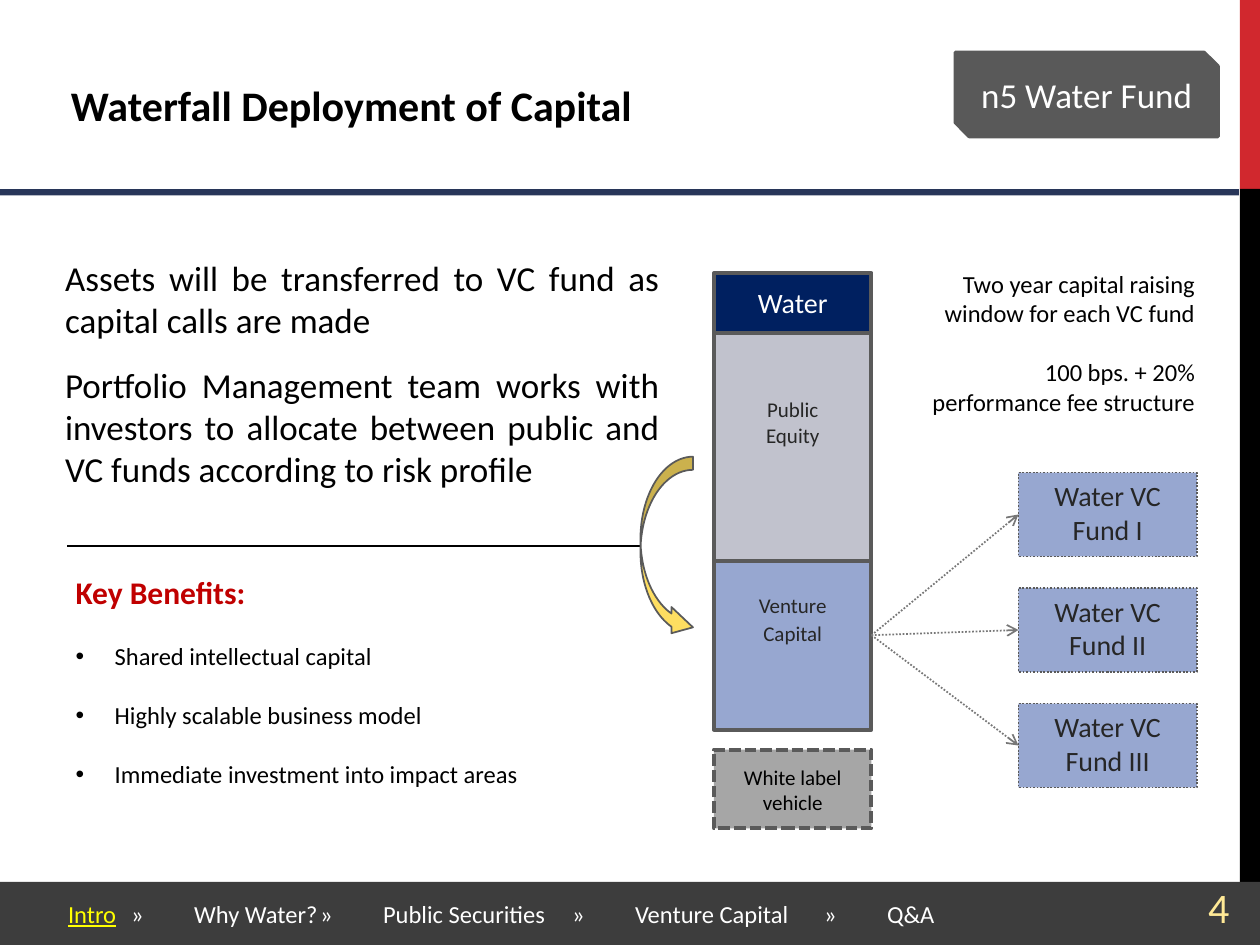
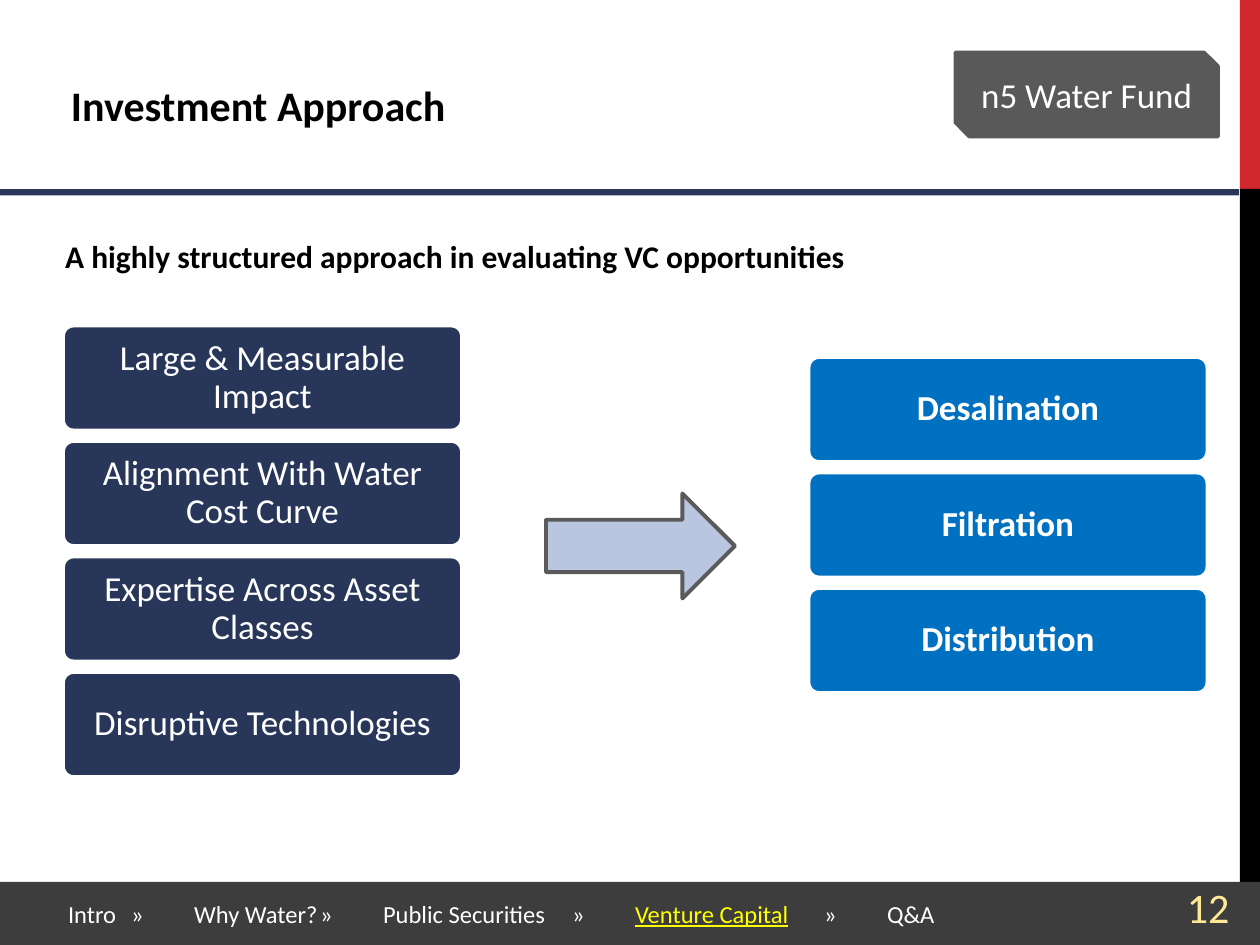
"""Build two slides of the water fund deck on a grid of 120 columns and 90 rows."""
from dataclasses import dataclass, field
from typing import Any, NamedTuple

from lxml import etree
from pptx import Presentation
from pptx import util as u
from pptx.dml.color import RGBColor
from pptx.enum import dml, shapes, text
from pptx.oxml import ns

WIDTH, HEIGHT = u.Inches(10), u.Inches(7.5)
COLUMNS, ROWS = 120, 90


@dataclass(frozen=True)
class Theme:
    """Colours, type sizes and the typeface."""
    face: str = "Calibri"
    black: str = "000000"
    white: str = "FFFFFF"
    ink: str = "262626"
    red: str = "D1282E"
    benefit: str = "C00000"
    band: str = "3D3D3D"
    badge: str = "595959"
    edge: str = "5A5A5A"
    flow: str = "777777"
    navy: str = "283659"
    deep: str = "002060"
    sector: str = "0070C0"
    venture: str = "97A7D0"
    public: str = "C1C2CD"
    label: str = "A6A6A6"
    gold: str = "FEDE61"
    arrow: str = "BAC5DF"
    number: str = "FFE996"
    current: str = "FFFF00"
    title: int = 24
    body: int = 20
    lead: int = 18
    fund: int = 16
    note: int = 14
    small: int = 12


T = Theme()
LEFT, CENTER, RIGHT, JUSTIFY = (text.PP_ALIGN.LEFT, text.PP_ALIGN.CENTER,
                                text.PP_ALIGN.RIGHT, text.PP_ALIGN.JUSTIFY)
TOP, MIDDLE = text.MSO_ANCHOR.TOP, text.MSO_ANCHOR.MIDDLE
DOTS, DASHES = dml.MSO_LINE.ROUND_DOT, dml.MSO_LINE.SQUARE_DOT
KIND = shapes.MSO_SHAPE


class Cell(NamedTuple):
    """A place on the grid."""
    col: float
    row: float
    cols: float
    rows: float


class Style(NamedTuple):
    """The look of a run."""
    size: int
    color: str
    bold: bool = False
    underline: bool = False


class Run(NamedTuple):
    """Words in one style."""
    words: str
    style: Style


@dataclass(frozen=True)
class Para:
    """A paragraph; gap is the space before it in points."""
    runs: tuple[Run, ...]
    align: Any = LEFT
    gap: float = 0
    spacing: float = 1.0
    bullet: bool = False
    tabs: tuple[float, ...] = ()


@dataclass(frozen=True)
class Panel:
    """A filled shape with optional text."""
    cell: Cell
    fill: str
    kind: Any = KIND.RECTANGLE
    edge: str | None = None
    weight: float = 2.25
    dash: Any = None
    adjust: tuple[float, ...] = ()
    paras: tuple[Para, ...] = ()
    anchor: Any = MIDDLE
    insets: dict[str, float] = field(default_factory=dict)


def para(words: str, style: Style, **layout: Any) -> Para:
    """Make a paragraph of one run."""
    return Para((Run(words, style),), **layout)


def x(col: float) -> int:
    """Turn a column into a length."""
    return round(WIDTH * col / COLUMNS)


def y(row: float) -> int:
    """Turn a row into a length."""
    return round(HEIGHT * row / ROWS)


def apply(target: Any, values: dict[str, Any]) -> None:
    """Set each named attribute."""
    for name, value in values.items():
        setattr(target, name, value)


def place(shape: Any, cell: Cell) -> None:
    """Move a shape to its cell."""
    apply(shape, {"left": x(cell.col), "top": y(cell.row),
                  "width": x(cell.cols), "height": y(cell.rows)})


def add_marks(paragraph: Any, spec_para: Para) -> None:
    """Write the bullet and tab stops of a paragraph."""
    props = paragraph._p.get_or_add_pPr()
    indent = u.Inches(0.31) if spec_para.bullet else 0
    props.set("marL", str(indent))
    props.set("indent", str(-indent))
    if spec_para.bullet:
        etree.SubElement(props, ns.qn("a:buChar")).set("char", "•")
    else:
        etree.SubElement(props, ns.qn("a:buNone"))
    if spec_para.tabs:
        stops = etree.SubElement(props, ns.qn("a:tabLst"))
        for stop in spec_para.tabs:
            tab = etree.SubElement(stops, ns.qn("a:tab"))
            tab.set("pos", str(u.Inches(stop)))
            tab.set("algn", "l")


def write(frame: Any, paras: tuple[Para, ...], anchor: Any = TOP,
          insets: dict[str, float] | None = None) -> None:
    """Fill a text frame."""
    margins = {f"margin_{side}": u.Inches(size) for side, size in (insets or {}).items()}
    apply(frame, {"word_wrap": True, "auto_size": text.MSO_AUTO_SIZE.NONE,
                  "vertical_anchor": anchor, **margins})
    for index, item in enumerate(paras):
        paragraph = frame.add_paragraph() if index else frame.paragraphs[0]
        add_marks(paragraph, item)
        apply(paragraph, {"alignment": item.align, "space_before": u.Pt(item.gap),
                          "space_after": u.Pt(0), "line_spacing": item.spacing})
        for words, style in item.runs:
            run = paragraph.add_run()
            run.text = words
            apply(run.font, {"name": T.face, "size": u.Pt(style.size),
                             "bold": style.bold, "underline": style.underline})
            run.font.color.rgb = RGBColor.from_string(style.color)


def draw(slide: Any, panel: Panel) -> Any:
    """Draw a panel."""
    shape = slide.shapes.add_shape(panel.kind, 0, 0, 0, 0)
    place(shape, panel.cell)
    shape.shadow.inherit = False
    shape.fill.solid()
    shape.fill.fore_color.rgb = RGBColor.from_string(panel.fill)
    if panel.edge:
        shape.line.color.rgb = RGBColor.from_string(panel.edge)
        apply(shape.line, {"width": u.Pt(panel.weight), "dash_style": panel.dash})
    else:
        shape.line.fill.background()
    for index, value in enumerate(panel.adjust):
        shape.adjustments[index] = value
    if panel.paras:
        write(shape.text_frame, panel.paras, panel.anchor, panel.insets)
    return shape


def fill_holder(slide: Any, index: int, cell: Cell, paras: tuple[Para, ...],
                anchor: Any = TOP, insets: dict[str, float] | None = None) -> None:
    """Move and fill a placeholder."""
    holder = slide.placeholders[index]
    place(holder, cell)
    write(holder.text_frame, paras, anchor, insets)


def add_note(slide: Any, cell: Cell, paras: tuple[Para, ...], anchor: Any = TOP) -> None:
    """Add a plain text box."""
    box = slide.shapes.add_textbox(0, 0, 0, 0)
    place(box, cell)
    write(box.text_frame, paras, anchor)


def add_line(slide: Any, start: tuple[float, float], end: tuple[float, float],
             color: str, dash: Any = None, target: Any = None) -> None:
    """Draw a line, with an arrowhead when it leads to a target's left side."""
    line = slide.shapes.add_connector(shapes.MSO_CONNECTOR.STRAIGHT,
                                      x(start[0]), y(start[1]), x(end[0]), y(end[1]))
    line.line.color.rgb = RGBColor.from_string(color)
    apply(line.line, {"width": u.Pt(1), "dash_style": dash})
    if target is not None:
        line.end_connect(target, 1)
        etree.SubElement(line.line._get_or_add_ln(), ns.qn("a:tailEnd")).set("type", "arrow")
    etree.SubElement(line._element.spPr, ns.qn("a:effectLst"))


SECTIONS = ("Intro", "Why Water?", "Public Securities", "Venture Capital", "Q&A")
SECTION_TABS = (0.61, 0.92, 2.09, 2.4, 3.96, 4.26, 5.71, 6.02)


def navigation(current: str) -> Para:
    """List the sections with the current one marked."""
    plain, marked = Style(T.note, T.white), Style(T.note, T.current, underline=True)
    runs: list[Run] = []
    for section in SECTIONS:
        if runs:
            runs.append(Run("\t»\t", plain))
        runs.append(Run(section, marked if section == current else plain))
    return Para(tuple(runs), tabs=SECTION_TABS)


def start_slide(deck: Any, layout: int, title: str, section: str, number: str) -> Any:
    """Add a slide with the shared title, bands, badge and footer."""
    slide = deck.slides.add_slide(deck.slide_layouts[layout])
    fill_holder(slide, 0, Cell(1, 5, 80, 10), (para(title, Style(T.title, T.black, True)),),
                MIDDLE, {"left": 0.48})
    badge = para("n5 Water Fund", Style(T.body, T.white), align=CENTER)
    for panel in (
        Panel(Cell(118.08, 0, 1.92, 18), T.red),
        Panel(Cell(118.08, 18, 1.92, 72), T.black),
        Panel(Cell(0, 84, 120, 6), T.band, paras=(navigation(section),), insets={"left": 0.54}),
        Panel(Cell(0, 18, 118, 0.6), T.navy),
        Panel(Cell(91, 5, 25, 8), T.badge, KIND.SNIP_2_DIAG_RECTANGLE, T.badge, paras=(badge,)),
    ):
        draw(slide, panel)
    add_note(slide, Cell(101, 84, 17.28, 4.8),
             (para(number, Style(T.title, T.number), align=RIGHT),), MIDDLE)
    return slide


def build_waterfall(deck: Any) -> None:
    """Build the capital deployment slide."""
    slide = start_slide(deck, 3, "Waterfall Deployment of Capital", "Intro", "4")
    body, note = Style(T.body, T.black), Style(T.note, T.black)
    fill_holder(slide, 1, Cell(5, 25, 59, 21), (
        para("Assets will be transferred to VC fund as capital calls are made", body, align=JUSTIFY),
        para("Portfolio Management team works with investors to allocate between public "
             "and VC funds according to risk profile", body, align=JUSTIFY, gap=13)), MIDDLE)
    benefits = ("Shared intellectual capital", "Highly scalable business model",
                "Immediate investment into impact areas")
    fill_holder(slide, 2, Cell(6, 54, 60, 24.6), (
        para("Key Benefits:", Style(T.lead, T.benefit, True)),
        *(para(benefit, note, gap=17, bullet=True) for benefit in benefits)))
    add_note(slide, Cell(87, 25, 28, 21), (
        para("Two year capital raising window for each VC fund", note, align=RIGHT),
        para("100 bps. + 20% performance fee structure", note, align=RIGHT, gap=17)))

    small = Style(T.small, T.ink)
    for row, rows, fill, style, words, gap, anchor, inset, dash in (
        (31.68, 21.72, T.public, small, ("Public", "Equity"), 0, TOP, 0.51, None),
        (53.4, 16.1, T.venture, small, ("Venture", "Capital"), 2, TOP, 0.25, None),
        (26, 5.68, T.deep, Style(T.fund, T.white), ("Water",), 0, MIDDLE, 0.05, None),
        (71.4, 7.5, T.label, Style(T.small, T.black), ("White label vehicle",), 0, TOP, 0.12, DASHES),
    ):
        paras = tuple(para(word, style, align=CENTER, gap=gap if index else 0)
                      for index, word in enumerate(words))
        draw(slide, Panel(Cell(68, row, 15, rows), fill, edge=T.edge, dash=dash,
                          paras=paras, anchor=anchor, insets={"top": inset}))

    for index, numeral in enumerate(("I", "II", "III")):
        row = 45 + 11 * index
        name = para(f"Water VC Fund {numeral}", Style(T.fund, T.ink), align=CENTER)
        fund = draw(slide, Panel(Cell(97, row, 17, 8), T.venture, edge=T.edge, weight=1,
                                 dash=DOTS, paras=(name,), anchor=TOP))
        add_line(slide, (83, 60.5), (97, row + 4), T.flow, DOTS, fund)
    add_line(slide, (6.4, 52), (61, 52), T.black)
    draw(slide, Panel(Cell(61, 43.5, 5, 17.5), T.gold, KIND.CURVED_RIGHT_ARROW, T.edge, 1,
                      adjust=(0.25, 0.5, 0.41)))


def build_approach(deck: Any) -> None:
    """Build the investment approach slide."""
    slide = start_slide(deck, 1, "Investment Approach", "Venture Capital", "12")
    fill_holder(slide, 1, Cell(5, 22, 101, 4.8), (
        para("A highly structured approach in evaluating VC opportunities",
             Style(T.lead, T.black, True)),))
    criteria = ("Large & Measurable Impact", "Alignment With Water Cost Curve",
                "Expertise Across Asset Classes", "Disruptive Technologies")
    sectors = ("Desalination", "Filtration", "Distribution")
    insets = dict(left=0.08, top=0.05, right=0.08, bottom=0.05)
    for col, first_row, fill, bold, names in ((6, 31, T.navy, False, criteria),
                                              (77, 34, T.sector, True, sectors)):
        for index, name in enumerate(names):
            words = para(name, Style(T.body, T.white, bold), align=CENTER, spacing=0.9)
            draw(slide, Panel(Cell(col, first_row + 11 * index, 38, 10), fill,
                              KIND.ROUNDED_RECTANGLE, T.white, adjust=(0.1,),
                              paras=(words,), insets=insets))
    draw(slide, Panel(Cell(52, 47, 18, 10), T.arrow, KIND.RIGHT_ARROW, T.edge))


def main() -> None:
    """Build and save the deck."""
    deck = Presentation()
    apply(deck, {"slide_width": WIDTH, "slide_height": HEIGHT})
    build_waterfall(deck)
    build_approach(deck)
    deck.save("out.pptx")


if __name__ == "__main__":
    main()
